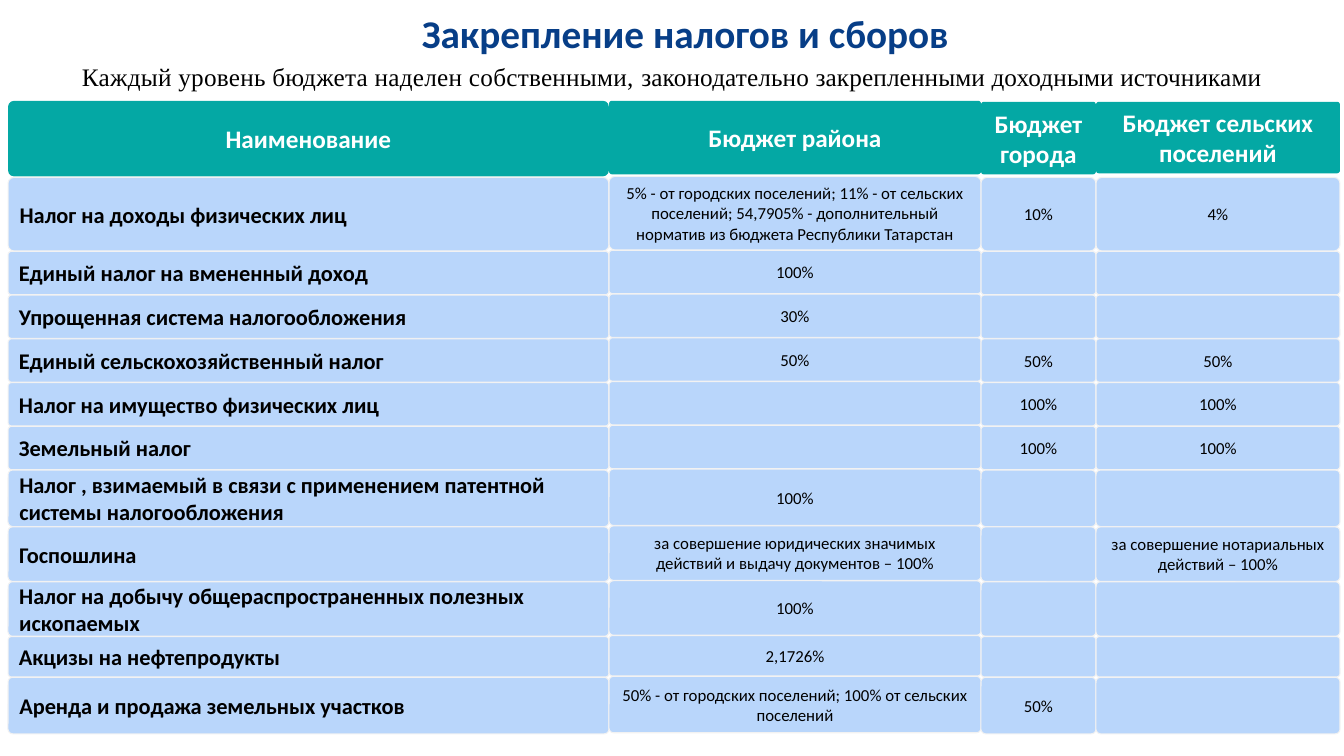
import pptx
import pptx.dml.color
import pptx.enum.shapes
import pptx.enum.text
import pptx.util

Inches = pptx.util.Inches
ALIGN = pptx.enum.text.PP_ALIGN
ANCHOR = pptx.enum.text.MSO_ANCHOR
AUTO_SIZE = pptx.enum.text.MSO_AUTO_SIZE

COLORS = {
    "title": "073E87",
    "text": "000000",
    "header": "04A8A4",
    "header_text": "FFFFFF",
    "cell": "B9D6FB",
    "border": "F2F2F2",
}

TITLE = "Закрепление налогов и сборов"
SUBTITLE = [
    ("Каждый уровень бюджета наделен собственными, ", 20),
    ("законодательно закрепленными доходными источниками", 10),
]
COLUMNS = [
    {"name": "Наименование", "left": 0.08, "width": 5.96, "top": 1, "height": 0.75, "corner": 0.08, "lift": 0},
    {"name": "Бюджет района", "left": 6.04, "width": 3.69, "top": 1, "height": 0.73, "corner": 0.04, "lift": 0.01},
    {"name": "Бюджет города", "left": 9.73, "width": 1.14, "top": 1.01, "height": 0.72, "corner": 0.04, "lift": 0},
    {"name": "Бюджет сельских поселений", "left": 10.87, "width": 2.42, "top": 1.01, "height": 0.71, "corner": 0.04, "lift": 0},
]
ROWS = [
    (0.73, "Налог на доходы физических лиц",
     "5% - от городских поселений; 11% - от сельских поселений; 54,7905% - дополнительный "
     "норматив из бюджета Республики Татарстан", "10%", "4%"),
    (0.43, "Единый налог на вмененный доход", "100%", "", ""),
    (0.43, "Упрощенная система налогообложения", "30%", "", ""),
    (0.43, "Единый сельскохозяйственный налог", "50%", "50%", "50%"),
    (0.43, "Налог на имущество физических лиц", "", "100%", "100%"),
    (0.43, "Земельный налог", "", "100%", "100%"),
    (0.56, "Налог , взимаемый в связи с применением патентной системы налогообложения", "100%", "", ""),
    (0.54, "Госпошлина", "за совершение юридических значимых действий и выдачу документов – 100%",
     "", "за совершение нотариальных действий – 100%"),
    (0.54, "Налог на добычу общераспространенных полезных ископаемых", "100%", "", ""),
    (0.4, "Акцизы на нефтепродукты", "2,1726%", "", ""),
    (0.56, "Аренда и продажа земельных участков",
     "50% - от городских поселений; 100% от сельских поселений", "50%", ""),
]
ROWS_TOP = 1.76
ROWS_BOTTOM = 7.28
CELL_CORNER = 0.08

FORMATS = {
    "title": {"size": 28, "name": "Calibri", "bold": True, "color": "title"},
    "subtitle": {"size": 18, "name": "Times New Roman", "bold": False, "color": "text"},
    "header": {"size": 18, "name": "Calibri", "bold": True, "color": "header_text"},
    "tax": {"size": 16, "name": "Calibri", "bold": True, "color": "text"},
    "share": {"size": 12, "name": "Calibri", "bold": False, "color": "text"},
}


def rgb(color):
    return pptx.dml.color.RGBColor.from_string(COLORS[color])


def place(shape, left, top, width, height):
    position = {"left": left, "top": top, "width": width, "height": height}
    for attribute, value in position.items():
        setattr(shape, attribute, Inches(value))


def add_run(paragraph, text, style):
    run = paragraph.add_run()
    run.text = text
    for attribute, value in FORMATS[style].items():
        if attribute == "color":
            run.font.color.rgb = rgb(value)
        elif attribute == "size":
            run.font.size = pptx.util.Pt(value)
        else:
            setattr(run.font, attribute, value)
    return run


def add_cell(slide, box, corner, fill, text, style, border=None):
    shape = slide.shapes.add_shape(
        pptx.enum.shapes.MSO_SHAPE.ROUNDED_RECTANGLE, *map(Inches, box))
    shape.adjustments[0] = corner
    shape.shadow.inherit = False
    shape.fill.solid()
    shape.fill.fore_color.rgb = rgb(fill)
    if border:
        shape.line.color.rgb = rgb(border)
        shape.line.width = pptx.util.Pt(0.75)
    else:
        shape.line.fill.background()
    if text:
        frame = shape.text_frame
        frame.word_wrap = True
        frame.vertical_anchor = ANCHOR.MIDDLE
        paragraph = frame.paragraphs[0]
        paragraph.alignment = ALIGN.LEFT if style == "tax" else ALIGN.CENTER
        paragraph.space_after = pptx.util.Pt(10)
        add_run(paragraph, text, style)


def add_headings(slide):
    title = slide.shapes.title
    place(title, 4.05, 0.04, 5.49, 0.57)
    subtitle = slide.shapes.add_textbox(0, 0, 0, 0)
    place(subtitle, 0.29, 0.56, 12.75, 0.4)
    for shape, wrap in ((title, False), (subtitle, True)):
        frame = shape.text_frame
        settings = {"word_wrap": wrap, "vertical_anchor": ANCHOR.TOP,
                    "auto_size": AUTO_SIZE.SHAPE_TO_FIT_TEXT}
        for attribute, value in settings.items():
            setattr(frame, attribute, value)
        frame.paragraphs[0].alignment = ALIGN.CENTER
    add_run(title.text_frame.paragraphs[0], TITLE, "title")
    for text, spacing in SUBTITLE:
        run = add_run(subtitle.text_frame.paragraphs[0], text, "subtitle")
        run.font._element.set("spc", str(spacing))


def add_grid(slide):
    for column in COLUMNS:
        box = [column[key] for key in ("left", "top", "width", "height")]
        add_cell(slide, box, column["corner"], "header", column["name"], "header")
    gap = (ROWS_BOTTOM - ROWS_TOP - sum(row[0] for row in ROWS)) / (len(ROWS) - 1)
    top = ROWS_TOP
    for height, *texts in ROWS:
        for index, (column, text) in enumerate(zip(COLUMNS, texts)):
            box = (column["left"], top - column["lift"], column["width"], height)
            style = "share" if index else "tax"
            add_cell(slide, box, CELL_CORNER, "cell", text, style, "border")
        top += height + gap


def main():
    presentation = pptx.Presentation()
    presentation.slide_width = Inches(13.33)
    presentation.slide_height = Inches(7.5)
    slide = presentation.slides.add_slide(presentation.slide_layouts[5])
    add_headings(slide)
    add_grid(slide)
    presentation.save("out.pptx")


if __name__ == "__main__":
    main()
